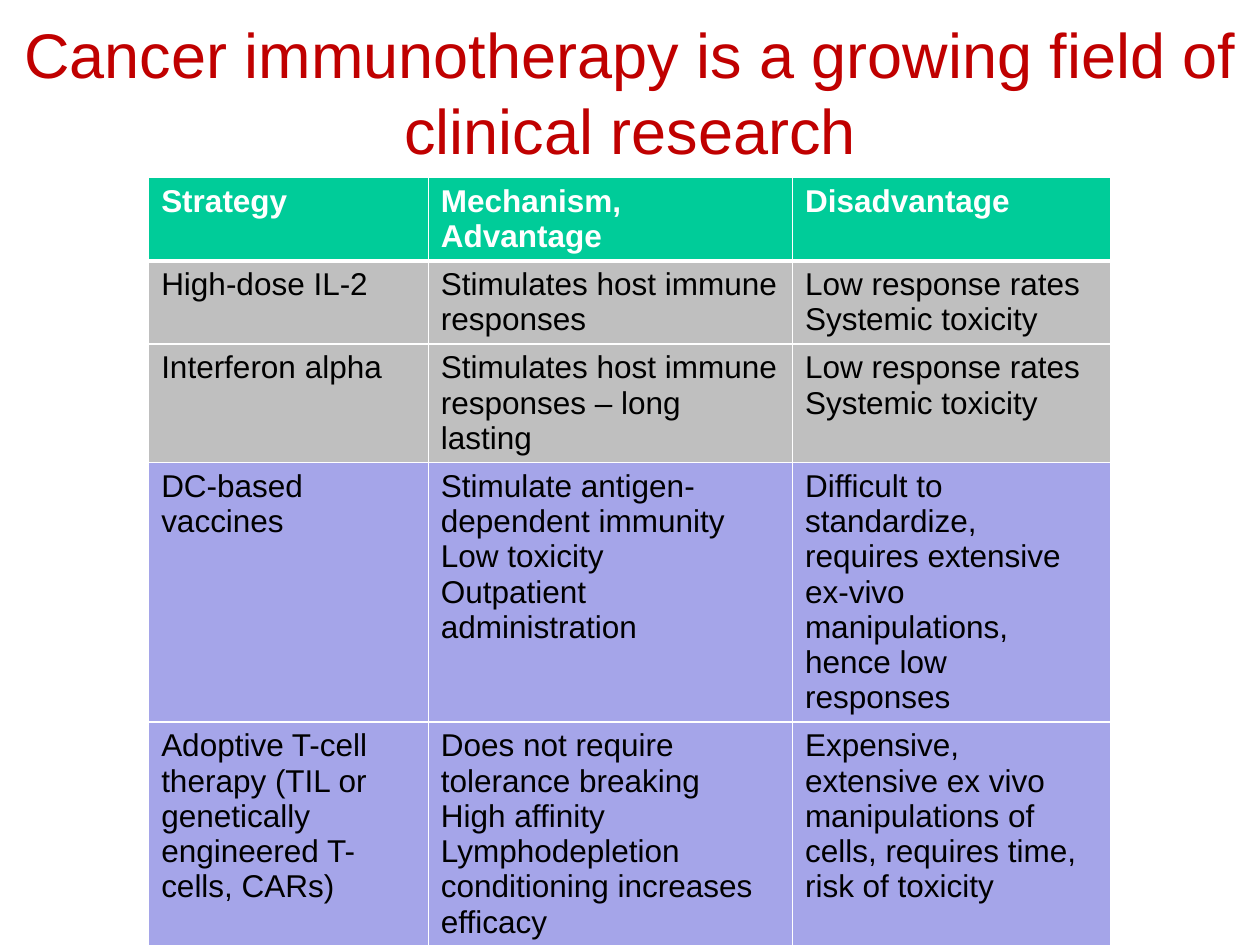
import pptx
import pptx.util
import pptx.dml.color
import pptx.enum.text
from lxml import etree
from pptx.oxml.ns import qn
from pptx.util import Inches

RGBColor = pptx.dml.color.RGBColor
WHITE = RGBColor(0xFF, 0xFF, 0xFF)
BLACK = RGBColor(0, 0, 0)
RED = RGBColor(0xC0, 0, 0)
GREEN = RGBColor(0, 0xCC, 0x99)
GRAY = RGBColor(0xBF, 0xBF, 0xBF)
LILAC = RGBColor(0xA5, 0xA5, 0xE9)
FONT = "Arial"

TITLE = "Cancer immunotherapy is a growing field of clinical research"
ROWS = [
    (GREEN, ["Strategy", "Mechanism, Advantage", "Disadvantage"]),
    (GRAY, ["High-dose IL-2", "Stimulates host immune responses",
            "Low response rates\nSystemic toxicity"]),
    (GRAY, ["Interferon alpha", "Stimulates host immune responses – long lasting",
            "Low response rates\nSystemic toxicity"]),
    (LILAC, ["DC-based vaccines",
             "Stimulate antigen-dependent immunity\nLow toxicity\nOutpatient administration",
             "Difficult to standardize, requires extensive ex-vivo manipulations, "
             "hence low responses"]),
    (LILAC, ["Adoptive T-cell therapy (TIL or genetically engineered T-cells, CARs)",
             "Does not require tolerance breaking\nHigh affinity\n"
             "Lymphodepletion conditioning increases efficacy",
             "Expensive, extensive ex vivo manipulations of cells, requires time, "
             "risk of toxicity"]),
]
COLUMN_WIDTHS = [2.22, 2.89, 2.53]
ROW_HEIGHT = 0.41


def format_text(text_frame, size, color, bold=False):
    for paragraph in text_frame.paragraphs:
        for run in paragraph.runs:
            run.font.name = FONT
            run.font.size = pptx.util.Pt(size)
            run.font.bold = bold
            run.font.color.rgb = color


def set_borders(cell, widths):
    properties = cell._tc.get_or_add_tcPr()
    for side, width in widths.items():
        line = etree.SubElement(properties, qn(f"a:ln{side}"), w=str(pptx.util.Pt(width)))
        fill = etree.SubElement(line, qn("a:solidFill"))
        etree.SubElement(fill, qn("a:srgbClr"), val=str(WHITE))


def add_strategy_table(slide):
    table = slide.shapes.add_table(
        len(ROWS), len(COLUMN_WIDTHS), Inches(1.18), Inches(1.41),
        Inches(sum(COLUMN_WIDTHS)), Inches(ROW_HEIGHT * len(ROWS))).table
    table.horz_banding = False
    for column, width in zip(table.columns, COLUMN_WIDTHS):
        column.width = Inches(width)
    for row_index, (row, (color, texts)) in enumerate(zip(table.rows, ROWS)):
        row.height = Inches(ROW_HEIGHT)
        header = row_index == 0
        for cell, text in zip(row.cells, texts):
            cell.text_frame.text = text
            format_text(cell.text_frame, 18, WHITE if header else BLACK, header)
            set_borders(cell, {"L": 1, "R": 1, "T": 3 if row_index == 1 else 1,
                               "B": 3 if header else 1})
            cell.fill.solid()
            cell.fill.fore_color.rgb = color


def add_title(slide):
    title = slide.shapes.add_textbox(0, Inches(0.1), Inches(10), Inches(1.25))
    text_frame = title.text_frame
    text_frame.word_wrap = True
    text_frame.vertical_anchor = pptx.enum.text.MSO_ANCHOR.MIDDLE
    text_frame.text = TITLE
    text_frame.paragraphs[0].alignment = pptx.enum.text.PP_ALIGN.CENTER
    format_text(text_frame, 36, RED)


def main():
    presentation = pptx.Presentation()
    presentation.slide_width = Inches(10)
    presentation.slide_height = Inches(7.5)
    slide = presentation.slides.add_slide(presentation.slide_layouts[6])
    add_strategy_table(slide)
    add_title(slide)
    presentation.save("out.pptx")


if __name__ == "__main__":
    main()
